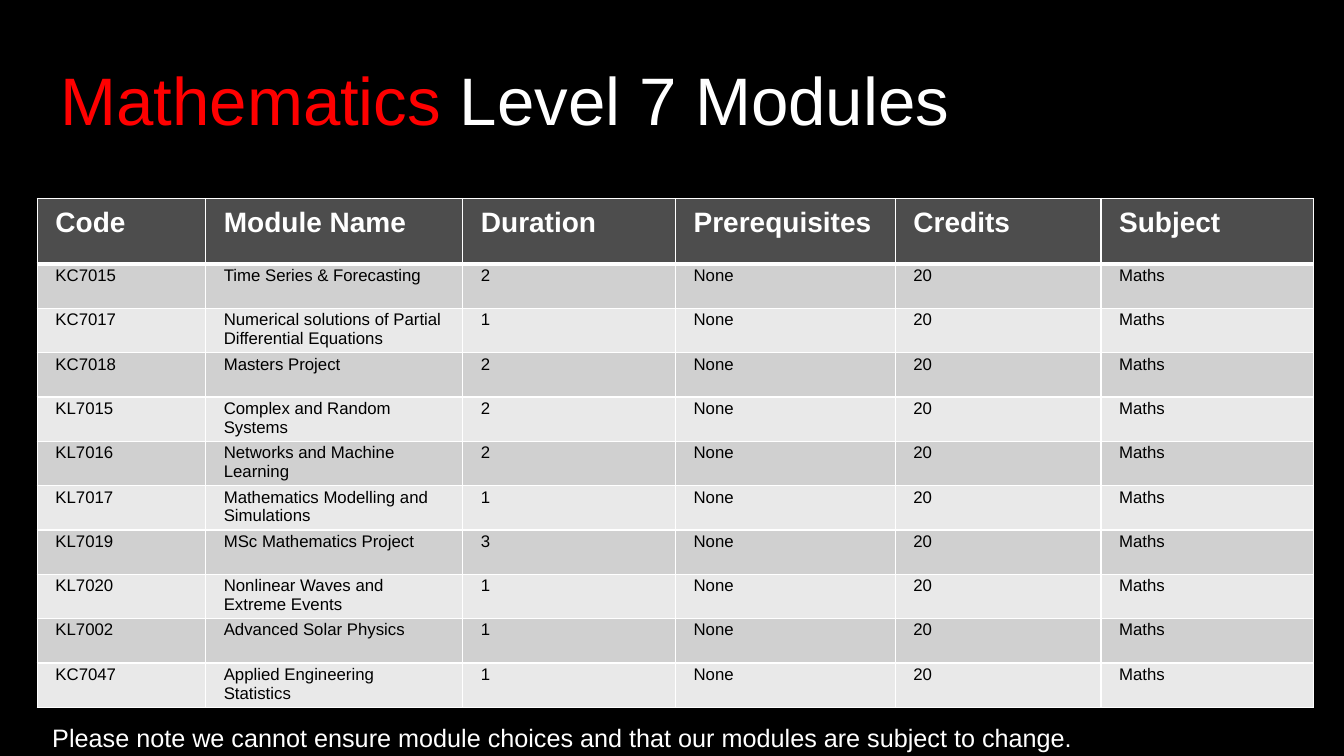
from lxml.etree import SubElement
from pptx import Presentation
from pptx.dml.color import RGBColor
from pptx.enum.text import MSO_ANCHOR as Anchor
from pptx.oxml.ns import qn
from pptx.util import Pt

PX = 9144  # 100 px to the inch
FONT = "Arial"
BLACK, WHITE, RED = "000000", "FFFFFF", "FF0000"
HEADER_FILL, BANDS = "4D4D4D", ("D0D0D0", "E9E9E9")
COLUMNS = {"Code": 167, "Module Name": 255, "Duration": 211,
           "Prerequisites": 218, "Credits": 204, "Subject": 211}
HEADER_HEIGHT, MODULE_HEIGHT = 65, 44
MODULES = [
    ("KC7015", "Time Series & Forecasting", 2),
    ("KC7017", "Numerical solutions of Partial Differential Equations", 1),
    ("KC7018", "Masters Project", 2),
    ("KL7015", "Complex and Random Systems", 2),
    ("KL7016", "Networks and Machine Learning", 2),
    ("KL7017", "Mathematics Modelling and Simulations", 1),
    ("KL7019", "MSc Mathematics Project", 3),
    ("KL7020", "Nonlinear Waves and Extreme Events", 1),
    ("KL7002", "Advanced Solar Physics", 1),
    ("KC7047", "Applied Engineering Statistics", 1),
]
SHARED = ("None", 20, "Maths")


def px(*lengths):
    return [length * PX for length in lengths]


def color(hex_string):
    return RGBColor.from_string(hex_string)


def add_run(paragraph, text, size, hex_string, bold=False):
    run = paragraph.add_run()
    run.text = str(text)
    font = run.font
    font.name, font.size, font.bold = FONT, Pt(size), bold
    font.color.rgb = color(hex_string)


def add_line(slide, box, runs, size, anchor=Anchor.TOP, spacing=None):
    """Place one paragraph of (text, colour) runs in the box."""
    frame = slide.shapes.add_textbox(*px(*box)).text_frame
    frame.word_wrap = True
    frame.vertical_anchor = anchor
    paragraph = frame.paragraphs[0]
    paragraph.line_spacing = spacing
    for text, hex_string in runs:
        add_run(paragraph, text, size, hex_string)


def add_borders(cell, top, bottom):
    properties = cell._tc.get_or_add_tcPr()
    for side, points in (("L", 1), ("R", 1), ("T", top), ("B", bottom)):
        border = SubElement(properties, qn(f"a:ln{side}"), w=str(Pt(points)))
        fill = SubElement(border, qn("a:solidFill"))
        SubElement(fill, qn("a:srgbClr"), val=WHITE)


def fill_row(cells, values, fill, size, ink, margin, top=1, bottom=1, bold=False):
    for cell, value in zip(cells, values):
        cell.margin_left, cell.margin_right = px(18, 18)
        cell.margin_top, cell.margin_bottom = px(margin, margin)
        add_borders(cell, top, bottom)
        cell.fill.solid()
        cell.fill.fore_color.rgb = color(fill)
        add_run(cell.text_frame.paragraphs[0], value, size, ink, bold)


def add_module_table(slide, left, top):
    heights = [HEADER_HEIGHT] + [MODULE_HEIGHT] * len(MODULES)
    box = px(left, top, sum(COLUMNS.values()), sum(heights))
    table = slide.shapes.add_table(len(heights), len(COLUMNS), *box).table
    table.horz_banding = False
    for column, width in zip(table.columns, px(*COLUMNS.values())):
        column.width = width
    for row, height in zip(table.rows, px(*heights)):
        row.height = height
    header, *module_rows = table.rows
    fill_row(header.cells, COLUMNS, HEADER_FILL, 20, WHITE, 9, bottom=3, bold=True)
    for index, (row, module) in enumerate(zip(module_rows, MODULES)):
        fill_row(row.cells, module + SHARED, BANDS[index % 2], 12, BLACK, 2,
                 top=1 if index else 3)


def build_modules_slide(deck):
    slide = deck.slides.add_slide(deck.slide_layouts[6])
    slide.background.fill.solid()
    slide.background.fill.fore_color.rgb = color(BLACK)
    add_module_table(slide, 37, 197)
    add_line(slide, (50, 40, 1015, 125),
             [("Mathematics", RED), (" Level 7 Modules", WHITE)],
             48, Anchor.MIDDLE, 0.9)
    add_line(slide, (42, 712, 1223, 40),
             [("Please note we cannot ensure module choices and that "
               "our modules are subject to change.", WHITE)], 18)


def main():
    deck = Presentation()
    deck.slide_width, deck.slide_height = px(1333, 750)
    build_modules_slide(deck)
    deck.save("out.pptx")


if __name__ == "__main__":
    main()
